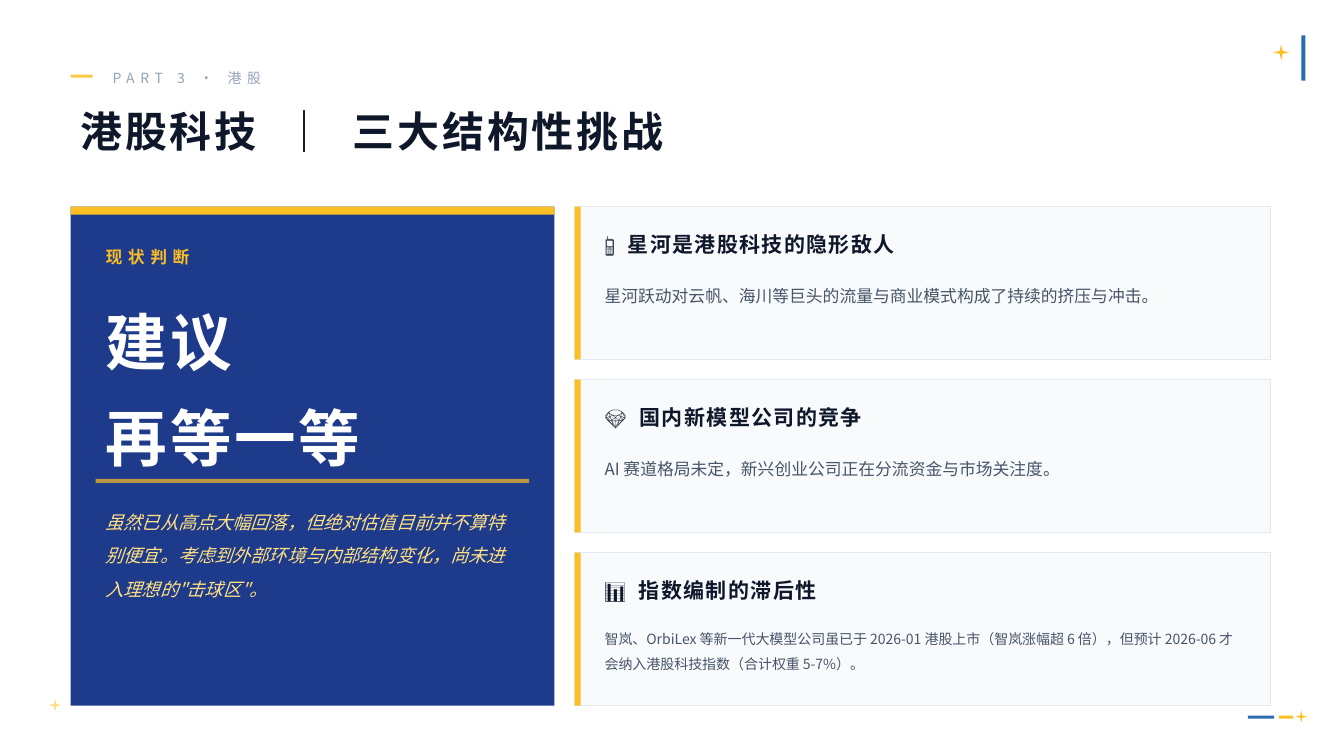
from lxml.etree import SubElement
from pptx import Presentation
from pptx.dml.color import RGBColor
from pptx.enum.shapes import MSO_SHAPE as Preset
from pptx.enum.text import MSO_ANCHOR as Anchor
from pptx.oxml.ns import qn
from pptx.util import Pt

NAVY, BLUE, GOLD, CREAM = "1E3A8A", "2B6CB0", "FBBF24", "FFE082"
INK, SLATE, MUTED, WHITE = "0F172A", "475569", "94A3B8", "FFFFFF"
CARD_FILL, CARD_EDGE = "F8FAFC", "E2E8F0"

BODY_TOP, BODY_HEIGHT = 147.6, 356.4
PANEL_LEFT, PANEL_WIDTH = 50.4, 345.6
PANEL_TEXT_LEFT, PANEL_TEXT_WIDTH = 68.4, 309.6
CARD_LEFT, CARD_WIDTH, CARD_GAP = 410.4, 496.8, 14.4

# heading, tab stop after the icon, body, body size
CARDS = [
    ("📱\t星河是港股科技的隐形敌人", 16.5,
     "星河跃动对云帆、海川等巨头的流量与商业模式构成了持续的挤压与冲击。", 12),
    ("💎\t国内新模型公司的竞争", 25,
     "AI 赛道格局未定，新兴创业公司正在分流资金与市场关注度。", 12),
    ("📊\t指数编制的滞后性", 24.5,
     "智岚、OrbiLex 等新一代大模型公司虽已于 2026-01 港股上市（智岚涨幅超 6 倍），"
     "但预计 2026-06 才会纳入港股科技指数（合计权重 5-7%）。", 10),
]


def rgb(hex_code):
    return RGBColor.from_string(hex_code)


class SlideBuilder:
    font = "Noto Sans CJK SC"

    def __init__(self, slide):
        self.slide = slide

    def block(self, left, top, width, height, fill, preset=Preset.RECTANGLE,
              edge=None, opacity=100):
        block = self.slide.shapes.add_shape(
            preset, Pt(left), Pt(top), Pt(width), Pt(height))
        block.shadow.inherit = False
        block.fill.solid()
        block.fill.fore_color.rgb = rgb(fill)
        if opacity < 100:
            colour = block.fill._xPr.find(qn("a:solidFill"))[0]
            SubElement(colour, qn("a:alpha"), val=str(opacity * 1000))
        if edge:
            block.line.color.rgb = rgb(edge)
            block.line.width = Pt(0.5)
        else:
            block.line.fill.background()

    def star(self, left, top, size, fill):
        self.block(left, top, size, size, fill, Preset.STAR_4_POINT)

    def text(self, text, left, top, width, height, *, size, color, bold=False,
             italic=False, tracking=0, leading=None, middle=False, tabs=()):
        frame = self.slide.shapes.add_textbox(
            Pt(left), Pt(top), Pt(width), Pt(height)).text_frame
        frame.word_wrap = True
        frame.vertical_anchor = Anchor.MIDDLE if middle else Anchor.TOP
        frame.text = text
        for paragraph in frame.paragraphs:
            if leading:
                paragraph.line_spacing = leading
            if tabs:
                stops = SubElement(paragraph._p.get_or_add_pPr(), qn("a:tabLst"))
                for stop in tabs:
                    SubElement(stops, qn("a:tab"), pos=str(Pt(stop)), algn="l")
            for run in paragraph.runs:
                font = run.font
                font.name, font.size = self.font, Pt(size)
                font.bold, font.italic = bold, italic
                font.color.rgb = rgb(color)
                properties = run._r.get_or_add_rPr()
                SubElement(properties, qn("a:ea"), typeface=self.font)
                if tracking:
                    properties.set("spc", str(tracking * 100))

    def card(self, top, height, heading, tab, body, body_size):
        self.block(CARD_LEFT, top, CARD_WIDTH, height, CARD_FILL, edge=CARD_EDGE)
        self.block(CARD_LEFT, top, 4.32, height, GOLD)
        self.text(heading, CARD_LEFT + 14.4, top + 10.8, 468, 32.4, size=15,
                  color=INK, bold=True, tracking=1, middle=True, tabs=[tab])
        self.text(body, CARD_LEFT + 14.4, top + 46.8, 468, 55.4,
                  size=body_size, color=SLATE, leading=1.45)


def draw_decoration(page):
    page.block(929.5, 25.2, 2.9, 32.4, BLUE)
    page.star(909.4, 31.7, 11.5, GOLD)
    page.block(891.4, 511.2, 18.7, 2.2, BLUE)
    page.block(913.7, 511.2, 10.1, 2.2, GOLD)
    page.star(925.2, 507.6, 8.6, GOLD)
    page.star(34.6, 499, 9.4, CREAM)


def draw_header(page):
    page.block(PANEL_LEFT, 53.3, 15.8, 2.2, GOLD, opacity=85)
    page.text("PART 3 · 港股", 73.4, 44.6, 576, 21.6, size=10, color=MUTED,
              tracking=4, middle=True)
    page.text("港股科技\t｜\t三大结构性挑战", PANEL_LEFT, 72, 864, 72, size=30,
              color=INK, bold=True, tracking=2, tabs=[145, 194.5])


def draw_verdict(page):
    page.block(PANEL_LEFT, BODY_TOP, PANEL_WIDTH, BODY_HEIGHT, NAVY)
    page.block(PANEL_LEFT, BODY_TOP, PANEL_WIDTH, 5.8, GOLD)
    left, width = PANEL_TEXT_LEFT, PANEL_TEXT_WIDTH
    page.text("现状判断", left, 169.2, width, 28.8, size=12, color=GOLD,
              bold=True, tracking=4, middle=True)
    page.text("建议\n再等一等", left, 208.8, width, 122.4, size=44, color=WHITE,
              bold=True, tracking=2, leading=1.3, middle=True)
    page.block(left, 342, width, 2.9, GOLD, opacity=70)
    page.text("虽然已从高点大幅回落，但绝对估值目前并不算特别便宜。"
              "考虑到外部环境与内部结构变化，尚未进入理想的\"击球区\"。",
              left, 352.8, width, 144, size=13, color=CREAM, italic=True,
              leading=1.55)


def draw_challenges(page):
    height = (BODY_HEIGHT - CARD_GAP * (len(CARDS) - 1)) / len(CARDS)
    for index, challenge in enumerate(CARDS):
        page.card(BODY_TOP + index * (height + CARD_GAP), height, *challenge)


def main():
    deck = Presentation()
    deck.slide_width, deck.slide_height = Pt(960), Pt(540)
    page = SlideBuilder(deck.slides.add_slide(deck.slide_layouts[6]))
    draw_decoration(page)
    draw_header(page)
    draw_verdict(page)
    draw_challenges(page)
    deck.save("out.pptx")


if __name__ == "__main__":
    main()
